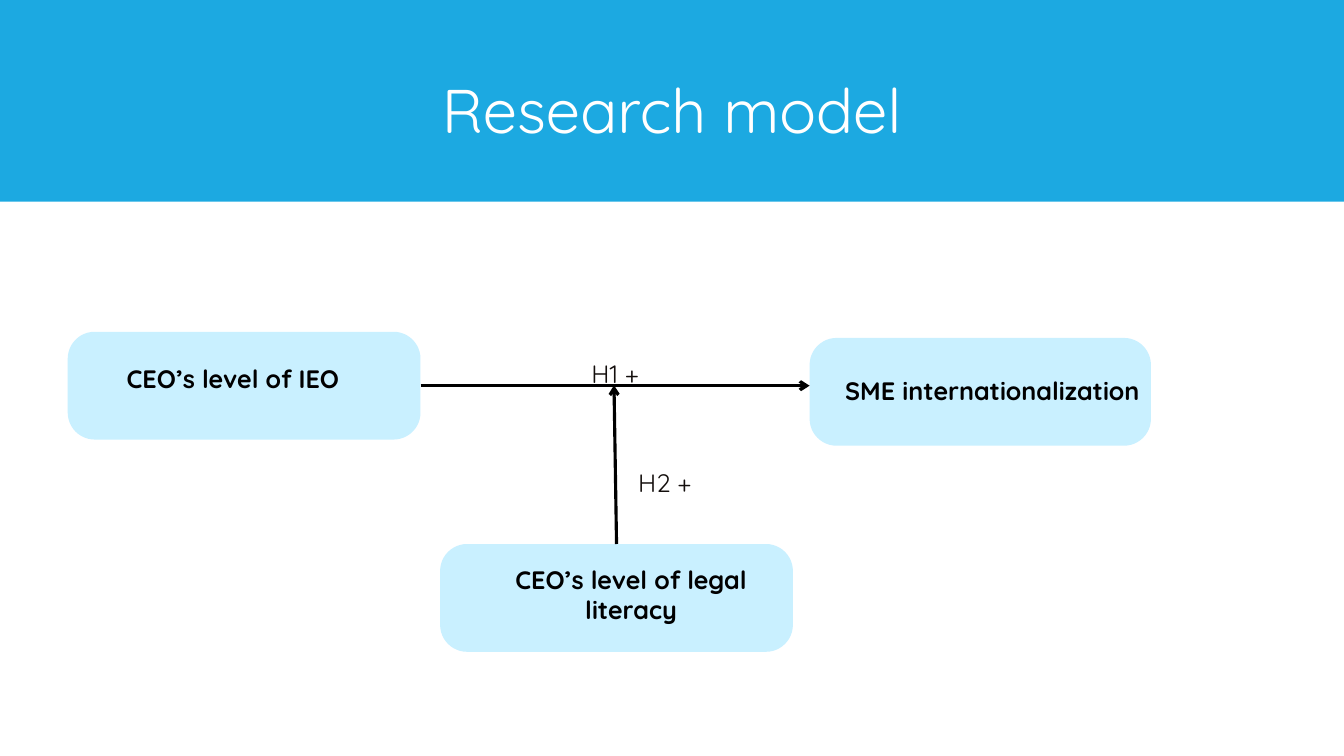
import pptx
import pptx.util
import pptx.dml.color
import pptx.enum.shapes
import pptx.enum.text
import pptx.oxml

Pt = pptx.util.Pt
SHAPE = pptx.enum.shapes.MSO_SHAPE
ALIGN = pptx.enum.text.PP_ALIGN
ANCHOR = pptx.enum.text.MSO_ANCHOR

# Content: lengths in points
SLIDE_W, SLIDE_H = 960, 540
BAND_H = 144
TITLE = ("Research model", (66, 28.8, 828, 104.4))
BOX_H = 77
# text, left, top, width, insets (left, top, right, bottom), alignment
BOXES = [
    ("CEO’s level of IEO", 48.4, 237, 252, (36.5, 17, 0, 0), ALIGN.LEFT),
    ("SME internationalization", 578.3, 241.4, 243.8, (19.8, 21.2, 0, 0), ALIGN.LEFT),
    ("CEO’s level of legal literacy", 314.4, 388.6, 252, (37.8, 9, 17, 0), ALIGN.CENTER),
]
ARROWS = [(300.4, 275.5, 578.3, 275.5), (440.4, 388.6, 438.6, 275.2)]
LABELS = [("H1 +", 411, 238.3), ("H2 +", 446.4, 316.1)]
LABEL_W, LABEL_H = 57, 34

TITLE_FONT = {"size": Pt(44), "bold": False}
BOX_FONT = {"size": Pt(18), "bold": True}
LABEL_FONT = {"size": Pt(18), "bold": False}


def rgb(value):
    return pptx.dml.color.RGBColor.from_string(value)


def set_attrs(obj, values):
    for name, value in values.items():
        setattr(obj, name, value)


def write(sp, text, font, color, align, spacing, insets, anchor):
    tf = sp.text_frame
    sides = ("margin_left", "margin_top", "margin_right", "margin_bottom")
    set_attrs(tf, {side: Pt(v) for side, v in zip(sides, insets)})
    set_attrs(tf, {"word_wrap": True, "vertical_anchor": anchor})
    p = tf.paragraphs[0]
    set_attrs(p, {"alignment": align, "line_spacing": spacing})
    r = p.add_run()
    r.text = text
    set_attrs(r.font, {"name": "Quicksand", **font})
    r.font.color.rgb = rgb(color)


def add_block(s, kind, frame, color):
    sp = s.shapes.add_shape(kind, *map(Pt, frame))
    sp.shadow.inherit = False
    sp.fill.solid()
    sp.fill.fore_color.rgb = rgb(color)
    sp.line.fill.background()
    return sp


def add_arrow(s, ends):
    cx = s.shapes.add_connector(pptx.enum.shapes.MSO_CONNECTOR.STRAIGHT, *map(Pt, ends))
    cx.line.width = Pt(2.25)
    cx.line.color.rgb = rgb("000000")
    ns = 'xmlns:a="http://schemas.openxmlformats.org/drawingml/2006/main"'
    cx.line._get_or_add_ln().append(pptx.oxml.parse_xml(f'<a:tailEnd {ns} type="arrow"/>'))
    cx._element.spPr.append(pptx.oxml.parse_xml(f"<a:effectLst {ns}/>"))


prs = pptx.Presentation()
set_attrs(prs, {"slide_width": Pt(SLIDE_W), "slide_height": Pt(SLIDE_H)})
s = prs.slides.add_slide(prs.slide_layouts[5])

# Header band behind the title
band = add_block(s, SHAPE.RECTANGLE, (0, 0, SLIDE_W, BAND_H), "1CA9E1")
title = s.shapes.title
title._element.addprevious(band._element)
text, frame = TITLE
set_attrs(title, dict(zip(("left", "top", "width", "height"), map(Pt, frame))))
write(title, text, TITLE_FONT, "FFFFFF", ALIGN.CENTER, 0.9, (7.2, 3.6, 7.2, 3.6), ANCHOR.MIDDLE)

# Model variables
for text, left, top, width, insets, align in BOXES:
    sp = add_block(s, SHAPE.ROUNDED_RECTANGLE, (left, top, width, BOX_H), "C9F0FF")
    sp.adjustments[0] = 0.25
    write(sp, text, BOX_FONT, "000000", align, 1.0, insets, ANCHOR.TOP)

# Hypothesis arrows and labels
for ends in ARROWS:
    add_arrow(s, ends)
for text, left, top in LABELS:
    sp = s.shapes.add_textbox(Pt(left), Pt(top), Pt(LABEL_W), Pt(LABEL_H))
    write(sp, text, LABEL_FONT, "130E0C", ALIGN.CENTER, Pt(39.3), (0, 0, 0, 0), ANCHOR.TOP)

prs.save("out.pptx")
